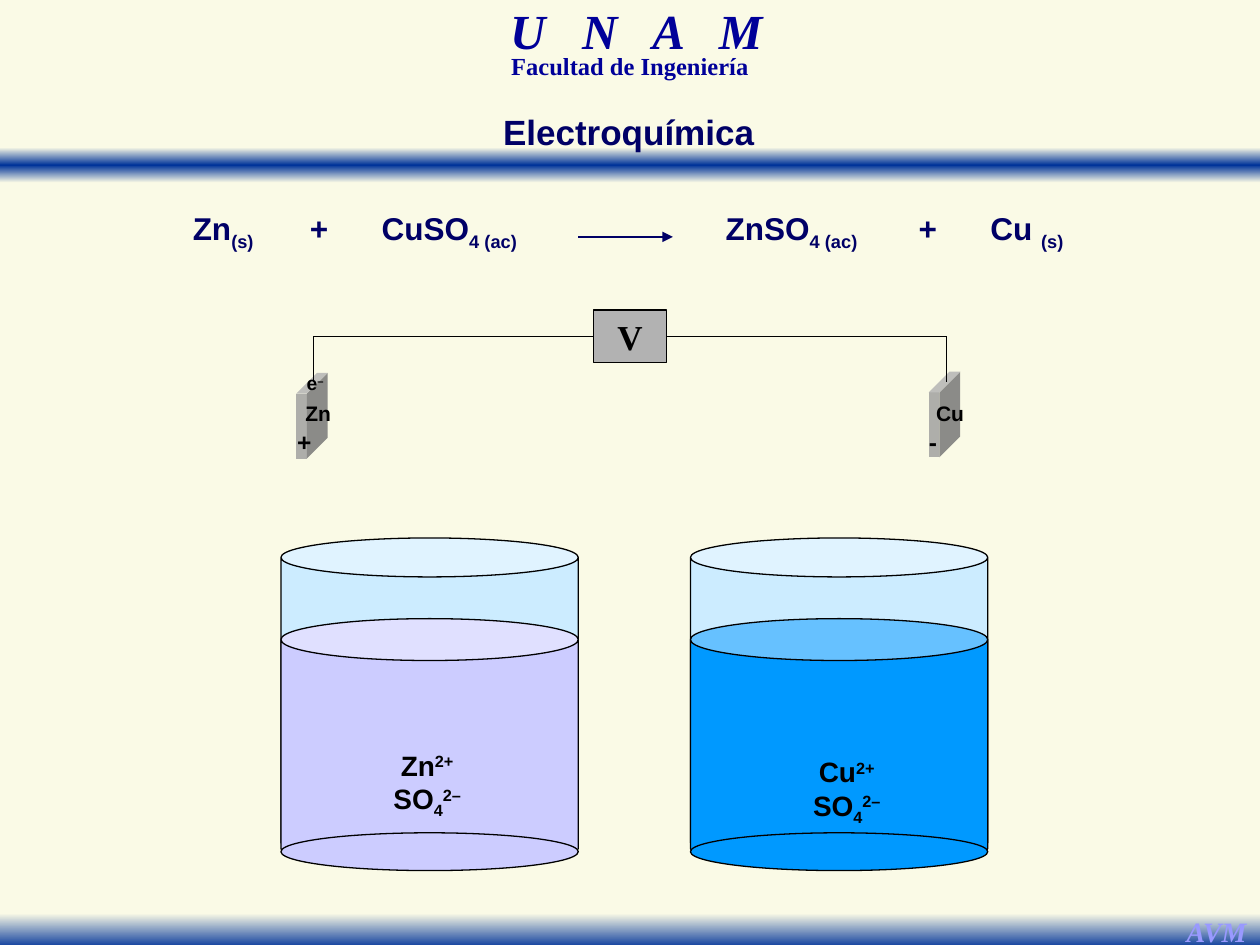
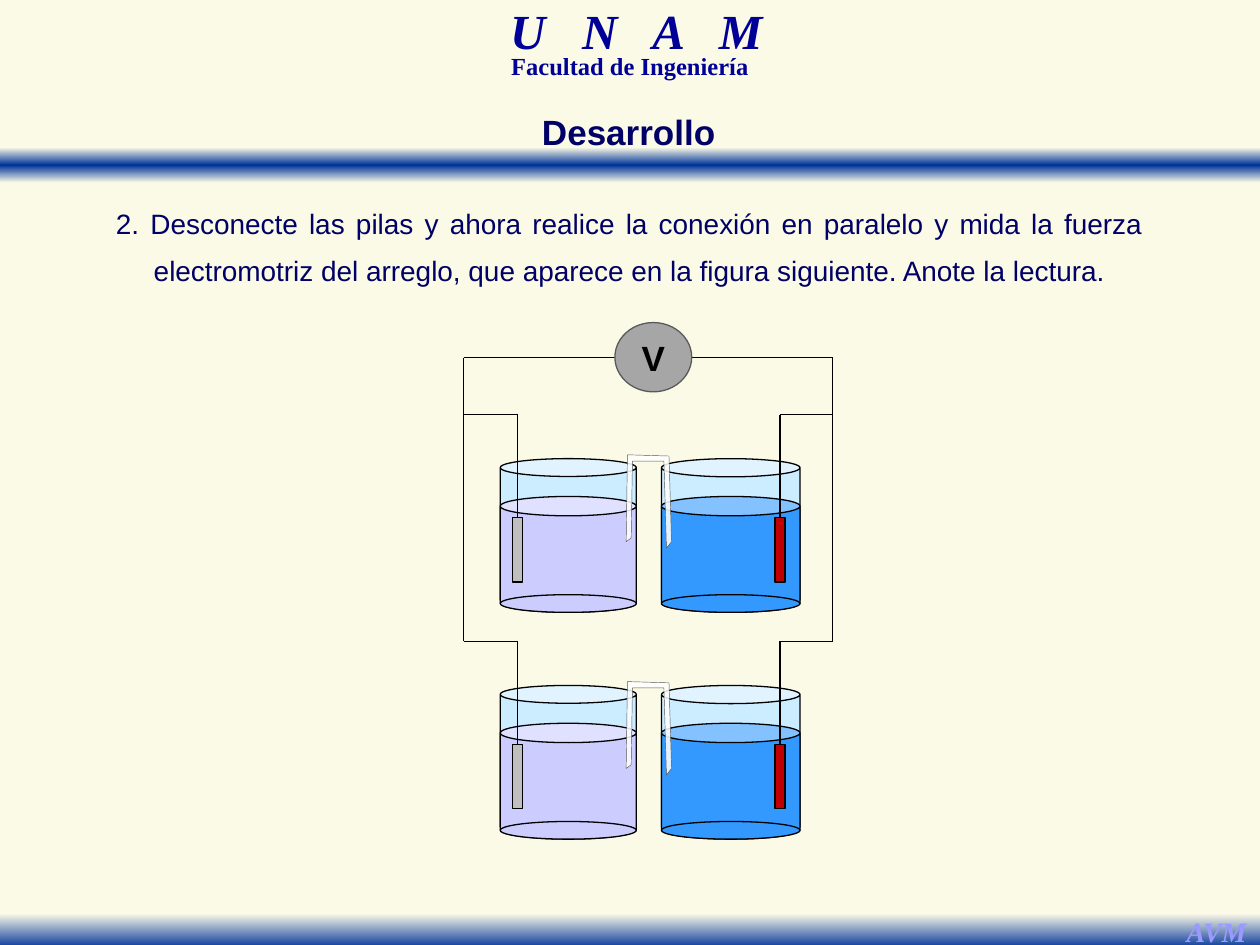
from dataclasses import dataclass

import pptx
import pptx.dml.color
import pptx.enum.shapes
import pptx.enum.text
import pptx.oxml.ns
import pptx.presentation
import pptx.shapes.autoshape
import pptx.shapes.base
import pptx.shapes.connector
import pptx.slide
import pptx.text.text
import pptx.util
from lxml import etree

RGBColor = pptx.dml.color.RGBColor
Align = pptx.enum.text.PP_ALIGN
Anchor = pptx.enum.text.MSO_ANCHOR
Preset = pptx.enum.shapes.MSO_SHAPE
Slide = pptx.slide.Slide
Shape = pptx.shapes.autoshape.Shape
Connector = pptx.shapes.connector.Connector
qn = pptx.oxml.ns.qn

PX = 9144
SANS = "Arial"
SERIF = "Times New Roman"

CREAM = RGBColor(0xFA, 0xFA, 0xE6)
BAND_BLUE = RGBColor(0x00, 0x33, 0x99)
HEADER_BLUE = RGBColor(0x00, 0x00, 0x99)
SIGNATURE = RGBColor(0x99, 0x99, 0xFF)
NAVY = RGBColor(0x00, 0x00, 0x66)
BLACK = RGBColor(0x00, 0x00, 0x00)
WHITE = RGBColor(0xFF, 0xFF, 0xFF)
GLASS = RGBColor(0xCC, 0xEC, 0xFF)
ZINC_SOLUTION = RGBColor(0xCC, 0xCC, 0xFF)
COPPER_SOLUTION = RGBColor(0x00, 0x99, 0xFF)
COPPER_SOLUTION_LIGHT = RGBColor(0x33, 0x99, 0xFF)
METER_GRAY = RGBColor(0xB2, 0xB2, 0xB2)
METER_ROUND = RGBColor(0xA6, 0xA6, 0xA6)
PLATE_GRAY = RGBColor(0xAE, 0xAE, 0xAA)
DARK_GRAY = RGBColor(0x59, 0x59, 0x59)
ZINC = RGBColor(0xBF, 0xBF, 0xBF)
COPPER = RGBColor(0xC0, 0x00, 0x00)


@dataclass(frozen=True)
class Box:
    left: int
    top: int
    width: int
    height: int


@dataclass(frozen=True)
class TextStyle:
    size: int
    color: RGBColor
    font: str = SANS
    bold: bool = True
    italic: bool = False
    align: Align = Align.CENTER
    line_spacing: float = 1.0


@dataclass(frozen=True)
class Label:
    box: Box
    lines: tuple[str, ...]
    style: TextStyle
    margins: tuple[int, int] = (10, 5)


@dataclass(frozen=True)
class Beaker:
    box: Box
    liquid: RGBColor


@dataclass(frozen=True)
class Side:
    beaker_left: int
    beaker_width: int
    liquid: RGBColor
    electrode_left: int
    metal: RGBColor
    outer_x: int


TITLE = TextStyle(20, NAVY)
BODY = TextStyle(16, NAVY, bold=False, align=Align.JUSTIFY, line_spacing=1.4)
REACTION = TextStyle(18, NAVY, align=Align.LEFT)
ION = TextStyle(16, BLACK)
METAL_NAME = TextStyle(12, BLACK)
SIGN = TextStyle(14, BLACK)
ELECTRON = TextStyle(11, BLACK)
SUBSCRIPT, SUPERSCRIPT = "-25000", "30000"


def place(shape: pptx.shapes.base.BaseShape, box: Box) -> None:
    shape.left, shape.top = box.left * PX, box.top * PX
    shape.width, shape.height = box.width * PX, box.height * PX


def set_style(paragraph: pptx.text.text._Paragraph, style: TextStyle) -> None:
    paragraph.alignment = style.align
    paragraph.line_spacing = style.line_spacing
    paragraph.space_before = pptx.util.Pt(0)
    font = paragraph.font
    font.name, font.size = style.font, pptx.util.Pt(style.size)
    font.bold, font.italic = style.bold, style.italic
    font.color.rgb = style.color


def set_frame(frame: pptx.text.text.TextFrame, margins: tuple[int, int],
              anchor: Anchor, wrap: bool) -> None:
    frame.auto_size = pptx.enum.text.MSO_AUTO_SIZE.NONE
    frame.word_wrap, frame.vertical_anchor = wrap, anchor
    frame.margin_left = frame.margin_right = margins[0] * PX
    frame.margin_top = frame.margin_bottom = margins[1] * PX


def write_formula(paragraph: pptx.text.text._Paragraph, formula: str) -> None:
    for part in formula.split("|"):
        run = paragraph.add_run()
        run.text = part.lstrip("_^")
        if part[0] in "_^":
            baseline = SUBSCRIPT if part[0] == "_" else SUPERSCRIPT
            run._r.get_or_add_rPr().set("baseline", baseline)


def add_label(slide: Slide, label: Label) -> Shape:
    box = label.box
    shape = slide.shapes.add_textbox(*(n * PX for n in (box.left, box.top, box.width, box.height)))
    frame = shape.text_frame
    set_frame(frame, label.margins, Anchor.TOP, False)
    for index, line in enumerate(label.lines):
        paragraph = frame.add_paragraph() if index else frame.paragraphs[0]
        write_formula(paragraph, line)
        set_style(paragraph, label.style)
    return shape


def outline(shape: Shape, fill: RGBColor, line: RGBColor | None = BLACK, weight: float = 0.75) -> None:
    shape.shadow.inherit = False
    shape.fill.solid()
    shape.fill.fore_color.rgb = fill
    if line is None:
        shape.line.fill.background()
    else:
        shape.line.color.rgb = line
        shape.line.width = pptx.util.Pt(weight)


def add_preset(slide: Slide, preset: Preset, box: Box, fill: RGBColor,
               line: RGBColor | None = BLACK, adjust: float | None = None) -> Shape:
    shape = slide.shapes.add_shape(preset, 0, 0, PX, PX)
    place(shape, box)
    outline(shape, fill, line)
    if adjust is not None:
        shape.adjustments[0] = adjust
    return shape


def add_wire(slide: Slide, x1: int, y1: int, x2: int, y2: int, color: RGBColor = BLACK) -> Connector:
    wire = slide.shapes.add_connector(pptx.enum.shapes.MSO_CONNECTOR.STRAIGHT,
                                      x1 * PX, y1 * PX, x2 * PX, y2 * PX)
    wire.line.color.rgb = color
    wire.line.width = pptx.util.Pt(0.75)
    etree.SubElement(wire.element.spPr, qn("a:effectLst"))
    return wire


def add_meter(slide: Slide, preset: Preset, box: Box, fill: RGBColor,
              line: RGBColor, font: str) -> Shape:
    meter = add_preset(slide, preset, box, fill, line)
    set_frame(meter.text_frame, (0, 0), Anchor.MIDDLE, False)
    paragraph = meter.text_frame.paragraphs[0]
    paragraph.text = "V"
    set_style(paragraph, TextStyle(20, BLACK, font))
    return meter


def add_beaker(slide: Slide, beaker: Beaker) -> None:
    box = beaker.box

    def portion(start: float, end: float) -> Box:
        top, bottom = round(start * box.height), round(end * box.height)
        return Box(box.left, box.top + top, box.width, bottom - top)

    add_preset(slide, Preset.CAN, portion(0, 0.974), GLASS, adjust=0.131)
    add_preset(slide, Preset.CAN, portion(0.244, 0.997), beaker.liquid, adjust=0.167)
    add_preset(slide, Preset.OVAL, portion(0.886, 1), beaker.liquid)


def add_band(slide: Slide, box: Box, stops: dict[int, RGBColor]) -> None:
    band = add_preset(slide, Preset.RECTANGLE, box, CREAM, None)
    band.fill.gradient()
    band.fill.gradient_angle = 270
    stop_list = band.element.spPr.find(".//" + qn("a:gsLst"))
    stop_list.clear()
    for position, color in stops.items():
        stop = etree.SubElement(stop_list, qn("a:gs"), pos=str(position * 1000))
        etree.SubElement(stop, qn("a:srgbClr"), val=str(color))


def build_master(presentation: pptx.presentation.Presentation, slide: Slide) -> None:
    master = presentation.slide_master
    master.background.fill.solid()
    master.background.fill.fore_color.rgb = CREAM
    add_band(slide, Box(0, 117, 1000, 28), {0: CREAM, 50: BAND_BLUE, 100: CREAM})
    add_band(slide, Box(0, 725, 1000, 28), {0: CREAM, 100: BAND_BLUE})
    school = add_label(slide, Label(Box(309, 8, 392, 43), ("U N A M",), TextStyle(
        28, HEADER_BLUE, SERIF, italic=True, line_spacing=0.7)))
    school.text_frame.paragraphs[0].runs[0]._r.get_or_add_rPr().set("spc", "700")
    add_label(slide, Label(Box(321, 42, 358, 26), ("Facultad de Ingeniería",), TextStyle(
        14, HEADER_BLUE, SERIF, line_spacing=0.7)))
    add_label(slide, Label(Box(931, 721, 69, 37), ("AVM",), TextStyle(
        16, SIGNATURE, SERIF, italic=True)))
    frame_shapes = [shape for shape in slide.shapes if not shape.is_placeholder]
    for number, shape in enumerate(frame_shapes, 101):
        shape.element.find(".//" + qn("p:cNvPr")).set("id", str(number))
        master.shapes.element.append(shape.element)


def set_title(slide: Slide, text: str) -> None:
    title = slide.shapes.title
    place(title, Box(300, 82, 398, 44))
    set_frame(title.text_frame, (10, 5), Anchor.MIDDLE, True)
    title.text_frame.text = text
    set_style(title.text_frame.paragraphs[0], TITLE)


def build_reaction_slide(slide: Slide) -> None:
    set_title(slide, "Electroquímica")
    terms = ((153, 51, "Zn|_(s)"), (246, 15, "+"), (303, 113, "CuSO|_4 (ac)"),
             (576, 110, "ZnSO|_4 (ac)"), (729, 15, "+"), (786, 61, "Cu |_(s)"))
    for left, width, formula in terms:
        add_label(slide, Label(Box(left, 166, width, 30), (formula,), REACTION, (0, 0)))
    arrow = add_wire(slide, 459, 188, 534, 188, NAVY)
    etree.SubElement(arrow.get_or_add_ln(), qn("a:tailEnd"), type="triangle")

    for left, liquid in ((223, ZINC_SOLUTION), (548, COPPER_SOLUTION)):
        add_beaker(slide, Beaker(Box(left, 427, 236, 264), liquid))
    for left, top, ion in ((300, 589, "Zn|^2+"), (633, 594, "Cu|^2+")):
        add_label(slide, Label(Box(left, top, 78, 64), (ion, "SO|_4|^2–"), ION))

    meter = add_meter(slide, Preset.RECTANGLE, Box(471, 246, 58, 42), METER_GRAY, BLACK, SERIF)
    for plate_left, plate_top, wire_x, side in ((235, 296, 249, 1), (737, 295, 751, 3)):
        add_preset(slide, Preset.CUBE, Box(plate_left, plate_top, 25, 68), PLATE_GRAY, None, 0.66)
        add_wire(slide, 500, 267, wire_x, 267).begin_connect(meter, side)
        add_wire(slide, wire_x, 267, wire_x, 303)
    for label in (
        Label(Box(232, 313, 41, 30), ("Zn",), METAL_NAME),
        Label(Box(733, 313, 42, 30), ("Cu",), METAL_NAME),
        Label(Box(241, 294, 18, 21), ("e|^–",), ELECTRON, (2, 1)),
        Label(Box(226, 334, 31, 33), ("+",), SIGN),
        Label(Box(727, 334, 27, 33), ("-",), SIGN),
    ):
        add_label(slide, label)


def add_salt_bridge(slide: Slide, top: int) -> None:
    points = [(501, 63), (497, 66), (498, -3), (531, -2), (533, 66), (529, 71), (527, 2), (502, 2)]
    corners = [(x, top + y) for x, y in points]
    builder = slide.shapes.build_freeform(*corners[0], scale=PX)
    builder.add_line_segments(corners[1:], close=True)
    bridge = builder.convert_to_shape()
    outline(bridge, WHITE, DARK_GRAY, 0.25)
    color = bridge.element.spPr.find(qn("a:solidFill")).find(qn("a:srgbClr"))
    etree.SubElement(color, qn("a:alpha"), val="86000")


def build_parallel_slide(slide: Slide) -> None:
    set_title(slide, "Desarrollo")
    body = slide.placeholders[1]
    place(body, Box(82, 148, 835, 81))
    set_frame(body.text_frame, (10, 5), Anchor.TOP, True)
    paragraph = body.text_frame.paragraphs[0]
    paragraph.text = ("2. Desconecte las pilas y ahora realice la conexión en paralelo y mida la "
                      "fuerza electromotriz del arreglo, que aparece en la figura siguiente. "
                      "Anote la lectura.")
    properties = paragraph._p.get_or_add_pPr()
    properties.set("marL", str(30 * PX))
    properties.set("indent", str(-30 * PX))
    etree.SubElement(properties, qn("a:buNone"))
    set_style(paragraph, BODY)

    sides = (Side(397, 108, ZINC_SOLUTION, 407, ZINC, 368),
             Side(525, 110, COPPER_SOLUTION_LIGHT, 615, COPPER, 661))
    cell_tops = (364, 544)
    for top in cell_tops:
        for side in sides:
            add_beaker(slide, Beaker(Box(side.beaker_left, top, side.beaker_width, 122), side.liquid))
            electrode = add_preset(slide, Preset.RECTANGLE,
                                   Box(side.electrode_left, top + 47, 8, 51), side.metal)
            lead_x = side.electrode_left + 4
            add_wire(slide, lead_x, top + 47, lead_x, top - 35).begin_connect(electrode, 0)
            add_wire(slide, side.outer_x, top - 35, lead_x, top - 35)
        add_salt_bridge(slide, top)
    for side in sides:
        add_wire(slide, side.outer_x, 284, side.outer_x, cell_tops[-1] - 35)
    add_wire(slide, sides[0].outer_x, 284, sides[1].outer_x, 284)
    add_meter(slide, Preset.OVAL, Box(488, 256, 61, 55), METER_ROUND, DARK_GRAY, SANS)


def main() -> None:
    presentation = pptx.Presentation()
    presentation.slide_width, presentation.slide_height = 1000 * PX, 750 * PX
    reaction_slide = presentation.slides.add_slide(presentation.slide_layouts[5])
    build_master(presentation, reaction_slide)
    build_reaction_slide(reaction_slide)
    build_parallel_slide(presentation.slides.add_slide(presentation.slide_layouts[1]))
    presentation.save("out.pptx")


if __name__ == "__main__":
    main()
